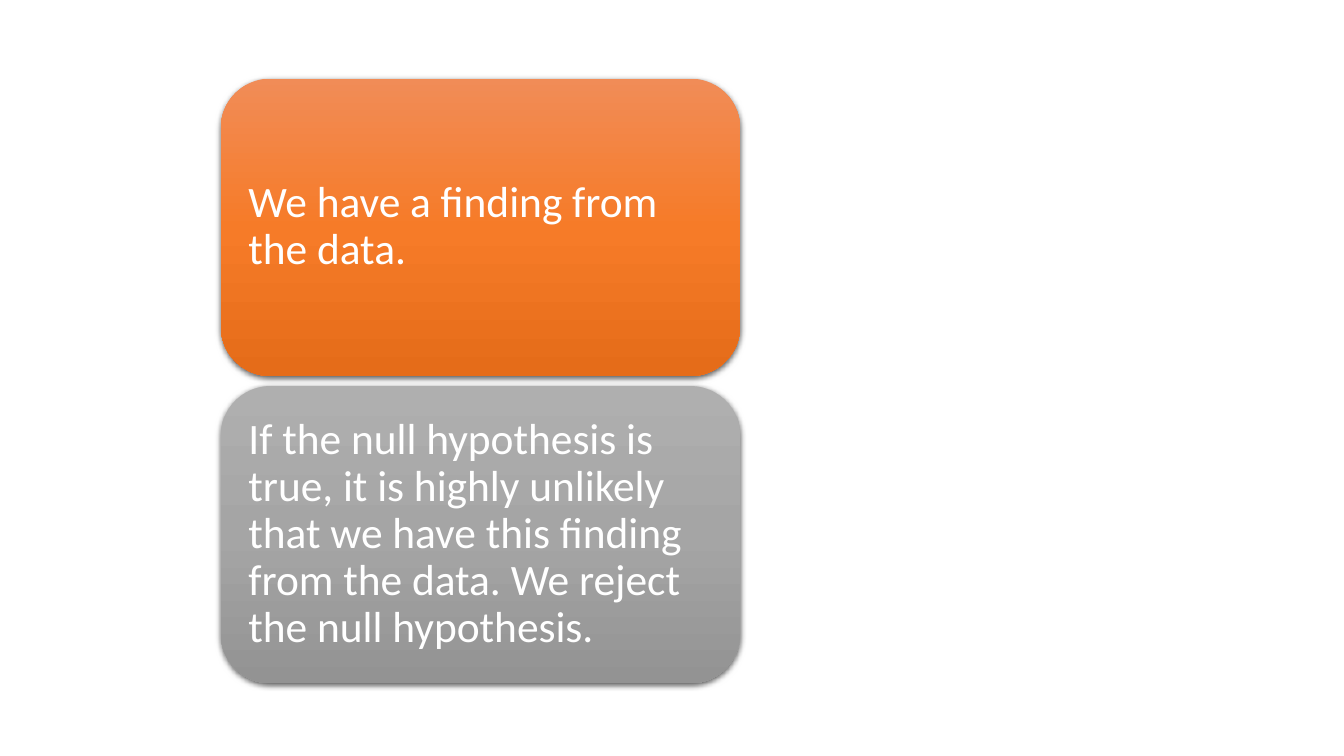
from copy import deepcopy
from dataclasses import dataclass

from lxml import etree
from pptx import Presentation
from pptx import util as u
from pptx.dml import color
from pptx.enum import shapes, text
from pptx.oxml import ns
from pptx.slide import Slide

COLORS = {
    "text": "FFFFFF",
    "shadow": "000000",
    "orange_top": "F18C57",
    "orange_mid": "F67B28",
    "orange_low": "E56C19",
    "gray_top": "AFAFAF",
    "gray_mid": "A5A5A5",
    "gray_low": "939393",
}
LEFT, TOP, WIDTH, HEIGHT, PITCH = 2.19, 0.78, 5.15, 2.95, 3.05
INSET = u.Inches(0.13)
FRAME_FORMAT = {
    "word_wrap": True,
    "vertical_anchor": text.MSO_ANCHOR.MIDDLE,
    "margin_left": INSET,
    "margin_right": INSET,
    "margin_top": INSET,
    "margin_bottom": INSET,
}
PARAGRAPH_FORMAT = {"alignment": text.PP_ALIGN.LEFT, "line_spacing": 0.9}
FONT_FORMAT = {"name": "Calibri", "size": u.Pt(31)}


@dataclass(frozen=True)
class Statement:
    wording: str
    hue: str


STATEMENTS = [
    Statement("We have a finding from the data.", "orange"),
    Statement(
        "If the null hypothesis is true, it is highly unlikely that we have "
        "this finding from the data. We reject the null hypothesis.",
        "gray",
    ),
]


def rgb(name: str) -> color.RGBColor:
    return color.RGBColor.from_string(COLORS[name])


def apply(target: object, values: dict) -> None:
    for name, value in values.items():
        setattr(target, name, value)


def fill_gradient(sp, hue: str) -> None:
    sp.fill.gradient()
    sp.fill.gradient_angle = 270
    stops = sp._element.spPr.find(".//" + ns.qn("a:gsLst"))
    stops.append(deepcopy(stops[-1]))
    for i, (stop, part) in enumerate(zip(sp.fill.gradient_stops, ("top", "mid", "low"))):
        stop.position = i / 2
        stop.color.rgb = rgb(f"{hue}_{part}")


def add_shadow(sp) -> None:
    sp.shadow.inherit = False
    effects = sp._element.spPr.find(ns.qn("a:effectLst"))
    outer = etree.SubElement(
        effects,
        ns.qn("a:outerShdw"),
        blurRad=str(u.Pt(4.5)),
        dist=str(u.Pt(1.5)),
        dir="5400000",
        algn="ctr",
        rotWithShape="0",
    )
    tint = etree.SubElement(outer, ns.qn("a:srgbClr"), val=COLORS["shadow"])
    etree.SubElement(tint, ns.qn("a:alpha"), val="63000")


def add_statement(s: Slide, statement: Statement, row: int) -> None:
    sp = s.shapes.add_shape(
        shapes.MSO_SHAPE.ROUNDED_RECTANGLE,
        u.Inches(LEFT),
        u.Inches(TOP + row * PITCH),
        u.Inches(WIDTH),
        u.Inches(HEIGHT),
    )
    fill_gradient(sp, statement.hue)
    sp.line.fill.background()
    add_shadow(sp)
    tf = sp.text_frame
    apply(tf, FRAME_FORMAT)
    p = tf.paragraphs[0]
    apply(p, PARAGRAPH_FORMAT)
    r = p.add_run()
    r.text = statement.wording
    apply(r.font, FONT_FORMAT)
    r.font.color.rgb = rgb("text")


def main() -> None:
    prs = Presentation()
    prs.slide_width = u.Inches(13.33)
    prs.slide_height = u.Inches(7.5)
    s = prs.slides.add_slide(prs.slide_layouts[6])
    for row, statement in enumerate(STATEMENTS):
        add_statement(s, statement, row)
    prs.save("out.pptx")


if __name__ == "__main__":
    main()
